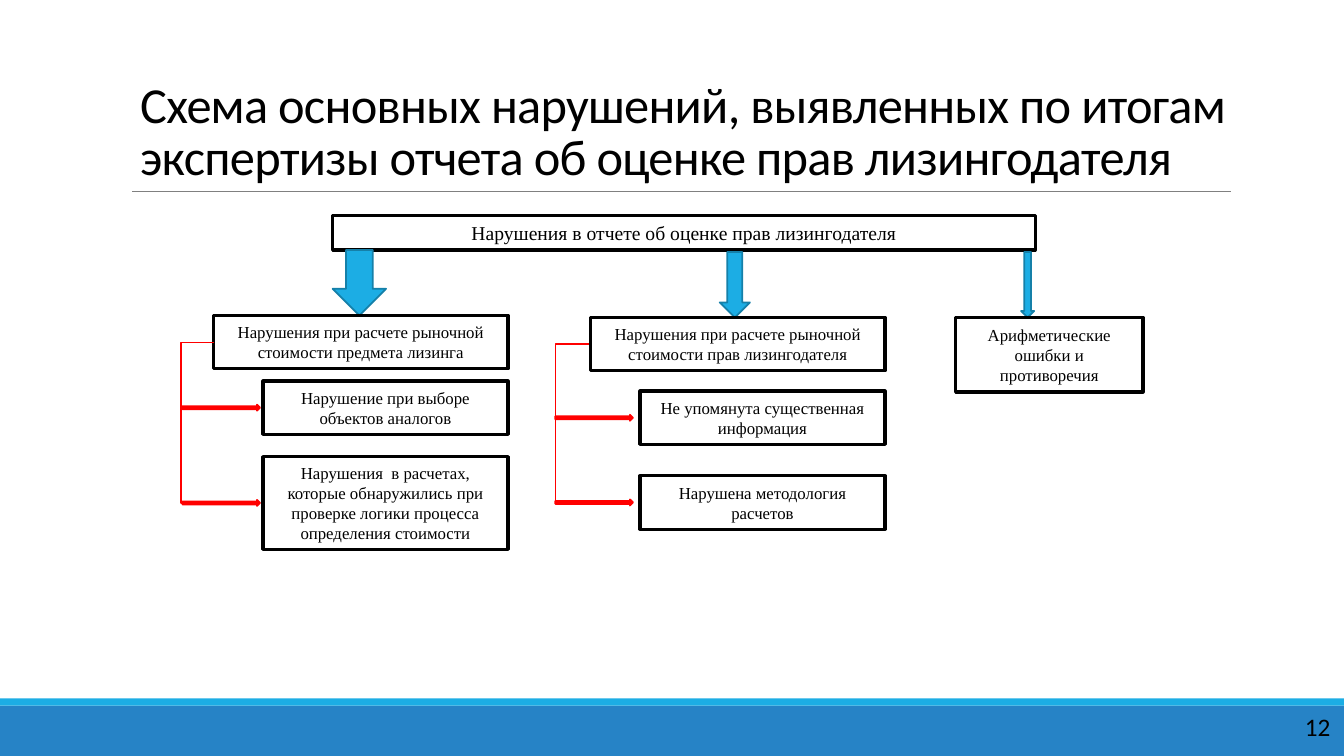
import dataclasses

import lxml.etree
import pptx
import pptx.dml.color
import pptx.enum.shapes
import pptx.enum.text
import pptx.oxml.ns
import pptx.util

SHAPE = pptx.enum.shapes.MSO_SHAPE
CONNECTOR = pptx.enum.shapes.MSO_CONNECTOR
ALIGN = pptx.enum.text.PP_ALIGN
ANCHOR = pptx.enum.text.MSO_ANCHOR

CELL = pptx.util.Inches(0.1)
COLUMNS, ROWS = 133.33, 75


@dataclasses.dataclass(frozen=True)
class Theme:
    black: str = "000000"
    gray: str = "808080"
    red: str = "FF0000"
    sky: str = "1CADE4"
    sky_edge: str = "1580A9"
    blue: str = "2683C6"
    title_font: str = "Calibri"
    diagram_font: str = "Times New Roman"
    title_size: float = 36
    number_size: float = 18
    root_size: float = 14
    box_size: float = 12
    box_line: float = 2.25
    arrow_line: float = 1.25
    elbow_line: float = 1
    rule_line: float = 0.5


@dataclasses.dataclass(frozen=True)
class Box:
    left: float
    top: float
    width: float
    height: float

    @property
    def right(self):
        return self.left + self.width

    @property
    def middle(self):
        return self.top + self.height / 2

    def lengths(self):
        return [grid(n) for n in (self.left, self.top, self.width, self.height)]


THEME = Theme()


def grid(cells):
    return pptx.util.Emu(round(cells * CELL))


def color(value):
    return pptx.dml.color.RGBColor.from_string(value)


def add_run(paragraph, text, font, size):
    run = paragraph.add_run()
    run.text = text
    run.font.name = font
    run.font.size = pptx.util.Pt(size)
    run.font.color.rgb = color(THEME.black)
    return run


def add_shape(slide, kind, box, fill=None, line=None, width=0):
    shape = slide.shapes.add_shape(kind, *box.lengths())
    shape.shadow.inherit = False
    if fill:
        shape.fill.solid()
        shape.fill.fore_color.rgb = color(fill)
    else:
        shape.fill.background()
    if line:
        shape.line.color.rgb = color(line)
        shape.line.width = pptx.util.Pt(width)
    else:
        shape.line.fill.background()
    return shape


def add_line(slide, kind, start, end, line, width):
    connector = slide.shapes.add_connector(kind, *map(grid, (*start, *end)))
    connector.line.color.rgb = color(line)
    connector.line.width = pptx.util.Pt(width)
    properties = connector._element.spPr
    lxml.etree.SubElement(properties, pptx.oxml.ns.qn("a:effectLst"))
    return connector


def add_label(slide, box, text, size):
    shape = add_shape(slide, SHAPE.RECTANGLE, box, None, THEME.black, THEME.box_line)
    frame = shape.text_frame
    frame.word_wrap = True
    frame.vertical_anchor = ANCHOR.MIDDLE
    paragraph = frame.paragraphs[0]
    paragraph.alignment = ALIGN.CENTER
    add_run(paragraph, text, THEME.diagram_font, size)


def add_elbow(slide, start, end):
    elbow = add_line(slide, CONNECTOR.ELBOW, start, end, THEME.red, THEME.elbow_line)
    geometry = elbow._element.spPr.find(pptx.oxml.ns.qn("a:prstGeom"))
    guides = geometry.find(pptx.oxml.ns.qn("a:avLst"))
    guide = lxml.etree.SubElement(guides, pptx.oxml.ns.qn("a:gd"))
    guide.set("name", "adj1")
    guide.set("fmla", "val 105200")


def footer(slide, box, number):
    strip = 0.7
    band = Box(box.left, box.top + strip, box.width, box.height - strip)
    add_shape(slide, SHAPE.RECTANGLE, band, THEME.blue)
    add_shape(slide, SHAPE.RECTANGLE, Box(box.left, box.top, box.width, strip), THEME.sky)
    place = Box(box.right - 5.25, band.top + 0.1, 5.3, 4)
    frame = slide.shapes.add_textbox(*place.lengths()).text_frame
    frame.word_wrap = True
    paragraph = frame.paragraphs[0]
    paragraph.alignment = ALIGN.CENTER
    add_run(paragraph, number, THEME.title_font, THEME.number_size)


def heading(slide, box, text):
    title = slide.shapes.title
    title.left, title.top, title.width, title.height = box.lengths()
    frame = title.text_frame
    frame.word_wrap = True
    frame.auto_size = pptx.enum.text.MSO_AUTO_SIZE.NONE
    frame.vertical_anchor = ANCHOR.BOTTOM
    paragraph = frame.paragraphs[0]
    paragraph.alignment = ALIGN.LEFT
    paragraph.line_spacing = 0.85
    run = add_run(paragraph, text, THEME.title_font, THEME.title_size)
    run._r.get_or_add_rPr().set("spc", "-50")
    rule = box.top + box.height + 0.1
    add_line(slide, CONNECTOR.STRAIGHT, (box.left + 0.2, rule),
             (box.right - 0.8, rule), THEME.gray, THEME.rule_line)


def root(slide, box, text, arrows):
    add_label(slide, box, text, THEME.root_size)
    for offset, drop, width in arrows:
        arrow = Box(box.left + offset, box.top + box.height + drop, width, 6.5)
        add_shape(slide, SHAPE.DOWN_ARROW, arrow, THEME.sky, THEME.sky_edge, THEME.arrow_line)


def branch(slide, box, head_inset, elbow_shift, text, items):
    head = Box(box.left + head_inset, box.top, box.width - head_inset, 5.3)
    add_label(slide, head, text, THEME.box_size)
    item_width, arrow_height = 24.3, 0.6
    for offset, height, item_text in items:
        item = Box(box.right - item_width, box.top + offset, item_width, height)
        add_label(slide, item, item_text, THEME.box_size)
        arrow = Box(box.left, item.middle - arrow_height / 2, 7.7, arrow_height)
        add_shape(slide, SHAPE.RIGHT_ARROW, arrow, THEME.red, THEME.red, THEME.arrow_line)
    spine = box.left + elbow_shift
    add_elbow(slide, (spine + 3.1, head.middle), (spine, item.middle))


def main():
    presentation = pptx.Presentation()
    presentation.slide_width = grid(COLUMNS)
    presentation.slide_height = grid(ROWS)
    slide = presentation.slides.add_slide(presentation.slide_layouts[5])

    footer(slide, Box(0, 69.3, COLUMNS, ROWS - 69.3), "12")
    heading(slide, Box(12.9, 8.7, 110, 10.2),
            "Схема основных нарушений, выявленных по итогам "
            "экспертизы отчета об оценке прав лизингодателя")
    root(slide, Box(33, 21.4, 69.7, 3.4),
         "Нарушения в отчете об оценке прав лизингодателя",
         [(0, 0, 5.3), (38.4, 0.2, 3), (68.3, 0.2, 1.3)])
    branch(slide, Box(18.1, 31.3, 32.3, 23.2), 3.1, 0,
           "Нарушения при расчете рыночной стоимости предмета лизинга",
           [(6.5, 5.3, "Нарушение при выборе объектов аналогов"),
            (14, 9.2, "Нарушения  в расчетах, которые обнаружились при "
                      "проверке логики процесса определения стоимости")])
    branch(slide, Box(55.1, 31.5, 32.7, 21), 3.5, 0.2,
           "Нарушения при расчете рыночной стоимости прав лизингодателя",
           [(7.3, 5.3, "Не упомянута существенная информация"),
            (15.7, 5.3, "Нарушена методология расчетов")])
    add_label(slide, Box(94.8, 31.5, 18.6, 7.4),
              "Арифметические ошибки и противоречия", THEME.box_size)

    presentation.save("out.pptx")


if __name__ == "__main__":
    main()
